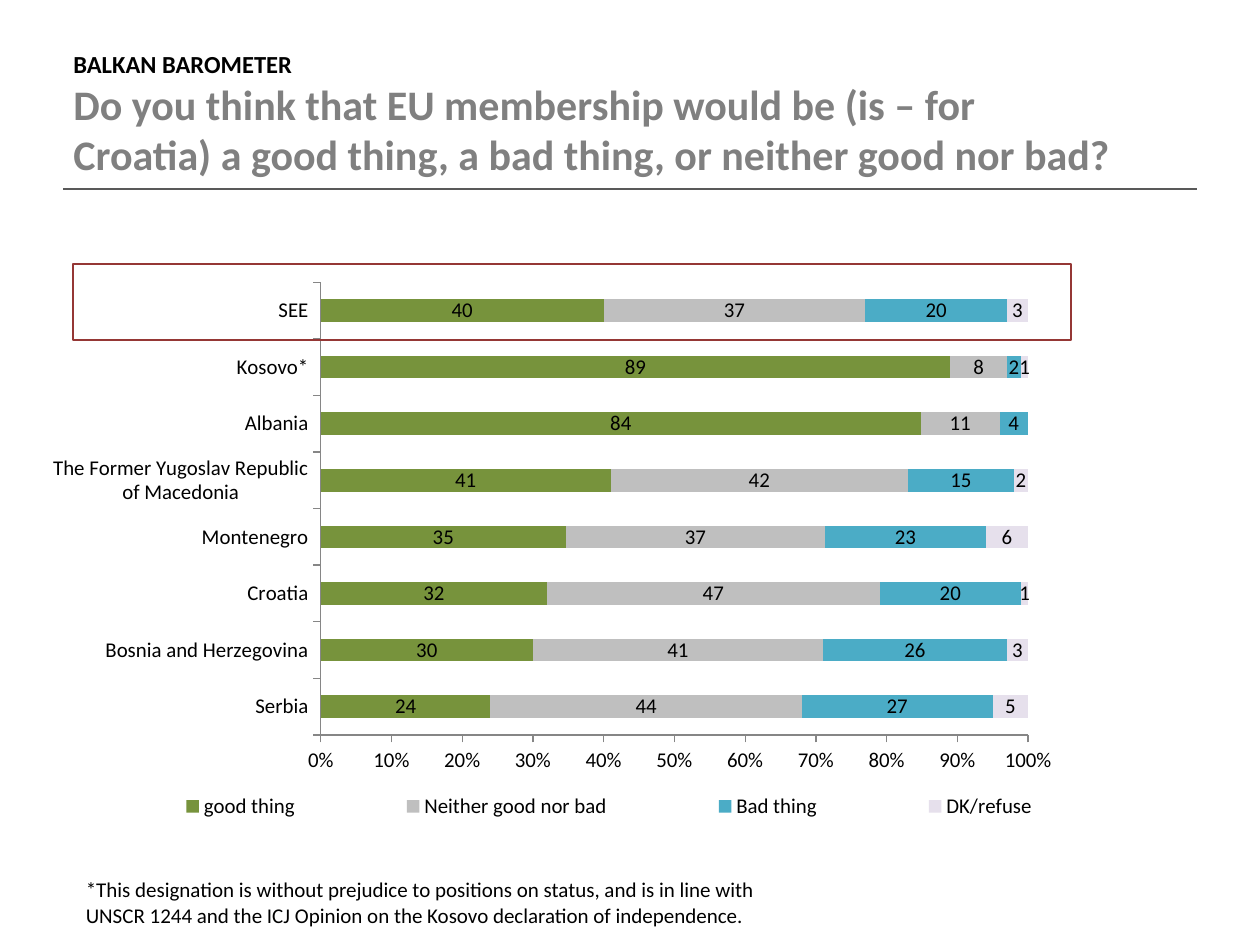
from typing import NamedTuple, Optional

from pptx import Presentation
from pptx.chart.data import CategoryChartData
from pptx.dml.color import RGBColor
from pptx.enum.chart import XL_CHART_TYPE, XL_LEGEND_POSITION, XL_TICK_MARK
from pptx.enum.shapes import MSO_CONNECTOR, MSO_SHAPE
from pptx.enum.text import MSO_ANCHOR
from pptx.oxml import parse_xml
from pptx.oxml.ns import nsdecls, qn
from pptx.util import Cm, Pt

STACKED_BARS = XL_CHART_TYPE.BAR_STACKED_100
LEGEND_BOTTOM = XL_LEGEND_POSITION.BOTTOM
TICK_OUTSIDE = XL_TICK_MARK.OUTSIDE
STRAIGHT = MSO_CONNECTOR.STRAIGHT
RECTANGLE = MSO_SHAPE.RECTANGLE
ANCHOR_TOP = MSO_ANCHOR.TOP
ANCHOR_MIDDLE = MSO_ANCHOR.MIDDLE

FONT = "Calibri"
BLACK = RGBColor(0x00, 0x00, 0x00)
TITLE_GRAY = RGBColor(0x80, 0x80, 0x80)
RULE_GRAY = RGBColor(0x59, 0x59, 0x59)
AXIS_GRAY = RGBColor(0x86, 0x86, 0x86)
HIGHLIGHT_RED = RGBColor(0x95, 0x37, 0x35)
GREEN = RGBColor(0x77, 0x93, 0x3C)
LIGHT_GRAY = RGBColor(0xBF, 0xBF, 0xBF)
BLUE = RGBColor(0x4B, 0xAC, 0xC6)
LAVENDER = RGBColor(0xE6, 0xE0, 0xEC)


class Box(NamedTuple):
    left: Cm
    top: Cm
    width: Cm
    height: Cm


class Layout(NamedTuple):
    """Position inside the chart, as fractions of its size."""
    x: float
    y: float
    w: float
    h: float


class Answer(NamedTuple):
    name: str
    color: RGBColor
    values: tuple[Optional[int], ...]


class Line(NamedTuple):
    text: str
    size: int
    color: RGBColor = BLACK
    bold: bool = False


COUNTRIES = ("Serbia", "Bosnia and Herzegovina", "Croatia", "Montenegro",
             "The Former Yugoslav Republic of Macedonia", "Albania", "Kosovo*", "SEE")
ANSWERS = (
    Answer("good thing", GREEN, (24, 30, 32, 35, 41, 84, 89, 40)),
    Answer("Neither good nor bad", LIGHT_GRAY, (44, 41, 47, 37, 42, 11, 8, 37)),
    Answer("Bad thing", BLUE, (27, 26, 20, 23, 15, 4, 2, 20)),
    Answer("DK/refuse", LAVENDER, (5, 3, 1, 6, 2, None, 1, 3)),
)
TITLE = (
    Line("BALKAN BAROMETER", 14, bold=True),
    Line("Do you think that EU membership would be (is – for Croatia) a good thing, "
         "a bad thing, or neither good nor bad?", 24, TITLE_GRAY, True),
)
NOTE = (
    Line("*This designation is without prejudice to positions on status, and is in line with "
         "UNSCR 1244 and the ICJ Opinion on the Kosovo declaration of independence.", 12),
)


def add_text(slide, box: Box, lines: tuple[Line, ...], *, anchor=ANCHOR_TOP,
             side_inset=Cm(0.25), end_inset=Cm(0.13)) -> None:
    frame = slide.shapes.add_textbox(*box).text_frame
    frame.word_wrap = True
    frame.vertical_anchor = anchor
    frame.margin_left = frame.margin_right = side_inset
    frame.margin_top = frame.margin_bottom = end_inset
    for index, line in enumerate(lines):
        paragraph = frame.add_paragraph() if index else frame.paragraphs[0]
        run = paragraph.add_run()
        run.text = line.text
        run.font.name = FONT
        run.font.size = Pt(line.size)
        run.font.bold = line.bold
        run.font.color.rgb = line.color


def layout_xml(layout: Layout, target: str = ""):
    modes = '<c:xMode val="edge"/><c:yMode val="edge"/>'
    sizes = "".join(f'<c:{name} val="{value}"/>' for name, value in layout._asdict().items())
    return parse_xml(f'<c:layout {nsdecls("c")}><c:manualLayout>{target}{modes}{sizes}'
                     "</c:manualLayout></c:layout>")


def add_answer_chart(slide, box: Box, plot_layout: Layout, legend_layout: Layout) -> None:
    data = CategoryChartData(number_format="#,##0")
    data.categories = COUNTRIES
    for answer in ANSWERS:
        data.add_series(answer.name, answer.values)
    chart = slide.shapes.add_chart(STACKED_BARS, *box, data).chart
    chart.has_title = False
    chart.font.name = FONT
    chart.font.size = Pt(12)
    chart.font.color.rgb = BLACK

    plot = chart.plots[0]
    plot.gap_width = 150
    plot.overlap = 100
    plot.vary_by_categories = False
    for series, answer in zip(plot.series, ANSWERS):
        series.format.fill.solid()
        series.format.fill.fore_color.rgb = answer.color
        series.data_labels.show_value = True
        series.data_labels.number_format = "#,##0"
        series.data_labels.number_format_is_linked = False

    for axis in (chart.category_axis, chart.value_axis):
        axis.has_major_gridlines = False
        axis.major_tick_mark = TICK_OUTSIDE
        axis.format.line.color.rgb = AXIS_GRAY
    chart.value_axis.tick_labels.number_format = "0%"
    chart.value_axis.tick_labels.number_format_is_linked = False
    chart.value_axis.minimum_scale = 0
    chart.value_axis.maximum_scale = 1
    chart.value_axis.major_unit = 0.1

    chart.has_legend = True
    chart.legend.position = LEGEND_BOTTOM
    chart.legend.include_in_layout = False
    plot_area = chart.element.find(".//" + qn("c:plotArea"))
    legend = chart.element.find(".//" + qn("c:legend"))
    for parent in (plot_area, legend):
        for old_layout in parent.findall(qn("c:layout")):
            parent.remove(old_layout)
    plot_area.insert(0, layout_xml(plot_layout, '<c:layoutTarget val="inner"/>'))
    legend.find(qn("c:legendPos")).addnext(layout_xml(legend_layout))


def add_rule(slide, left: Cm, right: Cm, top: Cm) -> None:
    rule = slide.shapes.add_connector(STRAIGHT, left, top, right, top)
    rule.line.color.rgb = RULE_GRAY
    rule.line.width = Pt(1)
    rule._element.spPr.append(parse_xml(f'<a:effectLst {nsdecls("a")}/>'))


def add_highlight(slide, box: Box) -> None:
    frame = slide.shapes.add_shape(RECTANGLE, *box)
    frame.shadow.inherit = False
    frame.fill.background()
    frame.line.color.rgb = HIGHLIGHT_RED
    frame.line.width = Pt(1.25)


def main() -> None:
    presentation = Presentation()
    presentation.slide_width = Cm(25.4)
    presentation.slide_height = Cm(19.05)
    slide = presentation.slides.add_slide(presentation.slide_layouts[6])

    add_rule(slide, Cm(1.27), Cm(24.13), Cm(3.81))
    add_text(slide, Box(Cm(1.48), Cm(0.99), Cm(21.08), Cm(2.62)), TITLE,
             anchor=ANCHOR_MIDDLE, side_inset=0, end_inset=0)
    add_answer_chart(slide, Box(Cm(1.07), Cm(5.33), Cm(22.07), Cm(12.01)),
                     plot_layout=Layout(0.24, 0.03, 0.65, 0.76),
                     legend_layout=Layout(0.02, 0.87, 0.97, 0.08))
    add_highlight(slide, Box(Cm(1.48), Cm(5.33), Cm(20.12), Cm(1.52)))
    add_text(slide, Box(Cm(1.48), Cm(17.55), Cm(14.4), Cm(1.27)), NOTE)
    presentation.save("out.pptx")


if __name__ == "__main__":
    main()
